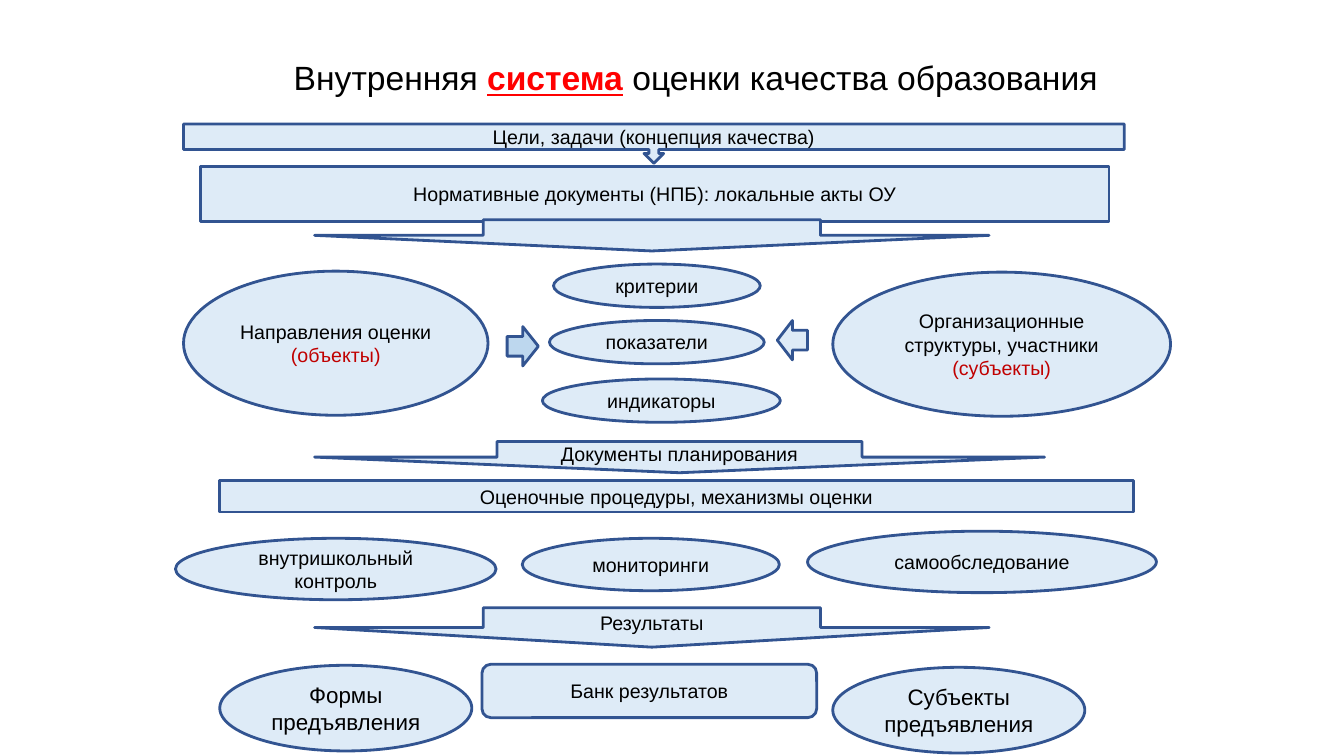
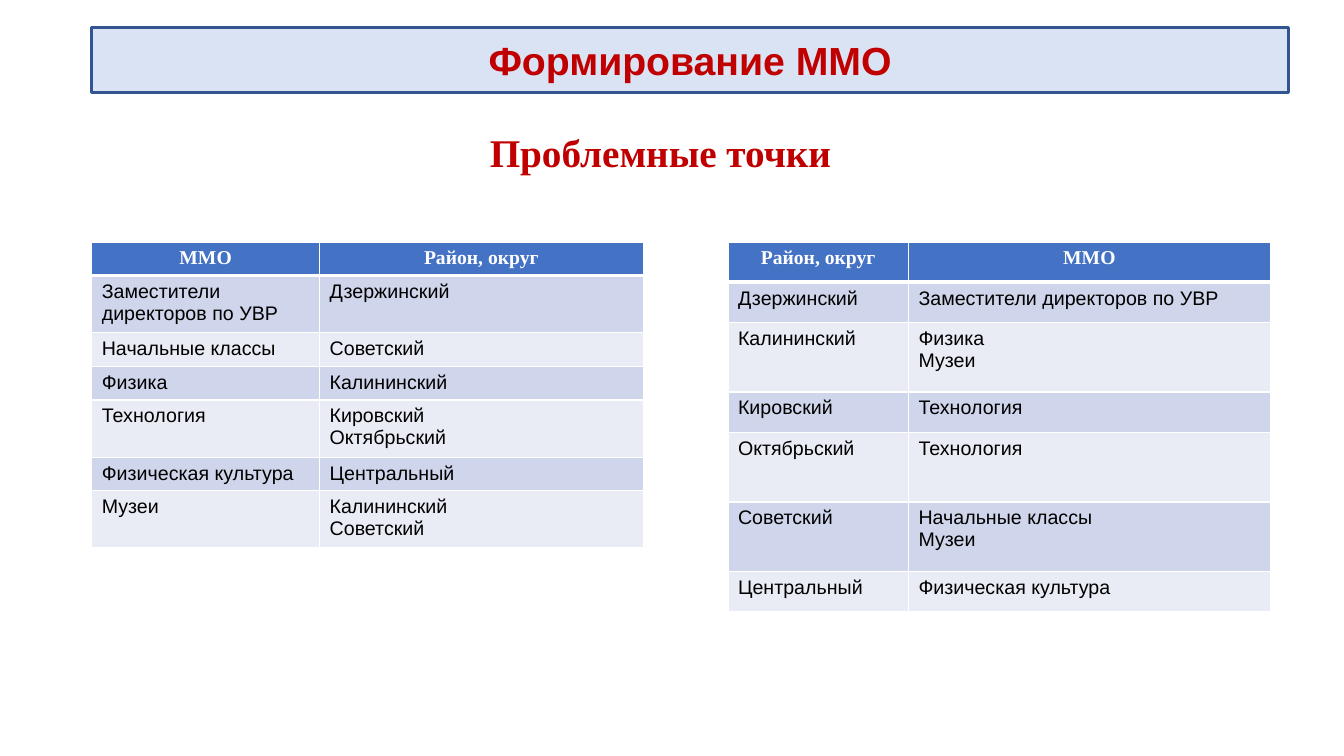
from dataclasses import dataclass
from lxml import etree
from pptx import Presentation
from pptx.dml.color import RGBColor
from pptx.enum.shapes import MSO_SHAPE as Kind
from pptx.enum.text import MSO_ANCHOR as Anchor, PP_ALIGN as Align
from pptx.oxml.ns import qn
from pptx.util import Inches, Pt


@dataclass(frozen=True)
class Theme:
    sans: str = "Arial"
    serif: str = "Times New Roman"
    ink: str = "000000"
    white: str = "FFFFFF"
    red: str = "C00000"
    alert: str = "FF0000"
    edge: str = "325491"
    pale: str = "DEEBF7"
    sky: str = "BDD7EE"
    band: str = "DAE3F3"
    head: str = "4472C4"
    rows: tuple = ("CFD5EA", "E9EBF5")
    body: int = 14
    large: int = 16
    title: int = 24
    banner: int = 28


T = Theme()


def write(frame, text, size=T.body, color=T.ink, font=T.sans, bold=False,
          align=Align.CENTER):
    """Fill a frame; lines in brackets turn red."""
    frame.word_wrap = True
    frame.text = text
    for para in frame.paragraphs:
        para.alignment = align
        for run in para.runs:
            tint = T.red if run.text.startswith("(") else color
            run.font.size, run.font.name, run.font.bold = Pt(size), font, bold
            run.font.color.rgb = RGBColor.from_string(tint)


def draw(slide, kind, spot, text="", fill=T.pale, **style):
    """Add an outlined shape with centred text."""
    shape = slide.shapes.add_shape(kind, *map(Inches, spot))
    shape.shadow.inherit = False
    shape.fill.solid()
    shape.fill.fore_color.rgb = RGBColor.from_string(fill)
    shape.line.color.rgb = RGBColor.from_string(T.edge)
    shape.line.width = Pt(2)
    shape.text_frame.vertical_anchor = Anchor.MIDDLE
    if text:
        write(shape.text_frame, text, **style)


deck = Presentation()
deck.slide_width, deck.slide_height = Inches(13.33), Inches(7.5)
blank = deck.slide_layouts[6]

# Slide 1: title with a stressed word
scheme = deck.slides.add_slide(blank)
box = scheme.shapes.add_textbox(*map(Inches, (2.41, 0.52, 8.98, 0.51)))
para = box.text_frame.paragraphs[0]
for part in ("Внутренняя ", "система", " оценки качества образования"):
    para.add_run().text = part
box.text_frame.word_wrap = True
para.alignment = Align.CENTER
for run in para.runs:
    key = run.text == "система"
    run.font.size, run.font.name = Pt(T.title), T.sans
    run.font.bold = run.font.underline = key
    run.font.color.rgb = RGBColor.from_string(T.alert if key else T.ink)

# Slide 1: scheme, back to front
for kind, spot, text in (
    (Kind.RECTANGLE, (1.99, 1.65, 9.01, 0.55),
     "Нормативные документы (НПБ): локальные акты ОУ"),
    (Kind.DOWN_ARROW_CALLOUT, (1.82, 1.23, 9.33, 0.39),
     "Цели, задачи (концепция качества)"),
    (Kind.OVAL, (1.82, 2.69, 3.02, 1.43), "Направления оценки\n(объекты)"),
    (Kind.OVAL, (5.49, 2.62, 2.05, 0.43), "критерии"),
    (Kind.OVAL, (5.45, 3.18, 2.13, 0.43), "показатели"),
    (Kind.OVAL, (5.38, 3.76, 2.36, 0.43), "индикаторы"),
    (Kind.OVAL, (8.26, 2.7, 3.35, 1.43),
     "Организационные структуры, участники\n(субъекты)"),
    (Kind.DOWN_ARROW, (3.12, 2.18, 6.69, 0.31), ""),
    (Kind.LEFT_ARROW, (7.71, 3.18, 0.3, 0.39), ""),
    (Kind.RECTANGLE, (2.18, 4.77, 9.06, 0.31),
     "Оценочные процедуры, механизмы оценки"),
    (Kind.DOWN_ARROW, (3.12, 4.38, 7.24, 0.31), "Документы планирования"),
    (Kind.OVAL, (1.74, 5.34, 3.18, 0.61), "внутришкольный контроль"),
    (Kind.OVAL, (5.18, 5.34, 2.55, 0.52), "мониторинги"),
    (Kind.OVAL, (8.01, 5.27, 3.46, 0.61), "самообследование"),
    (Kind.DOWN_ARROW, (3.12, 6.03, 6.69, 0.39), "Результаты"),
    (Kind.ROUNDED_RECTANGLE, (4.78, 6.59, 3.32, 0.53), "Банк результатов"),
):
    draw(scheme, kind, spot, text)
draw(scheme, Kind.RIGHT_ARROW, (5.03, 3.24, 0.31, 0.39), fill=T.sky)
for left, top, text in ((2.18, 6.6, "Формы предъявления"),
                        (8.26, 6.62, "Субъекты предъявления")):
    draw(scheme, Kind.OVAL, (left, top, 2.5, 0.85), text, size=T.large)

# Slide 2: tables
points = deck.slides.add_slide(blank)
for left, cols, highs, data in (
    (0.91, (2.26, 3.21), (0.3, 0.54, 0.32, 0.32, 0.54, 0.32, 0.54), (
        ("ММО", "Район, округ"),
        ("Заместители директоров по УВР", "Дзержинский"),
        ("Начальные классы", "Советский"),
        ("Физика", "Калининский"),
        ("Технология", "Кировский\nОктябрьский"),
        ("Физическая культура", "Центральный"),
        ("Музеи", "Калининский\nСоветский"))),
    (7.22, (1.79, 3.59), (0.4, 0.4, 0.69, 0.4, 0.69, 0.69, 0.4), (
        ("Район, округ", "ММО"),
        ("Дзержинский", "Заместители директоров по УВР"),
        ("Калининский", "Физика\nМузеи"),
        ("Кировский", "Технология"),
        ("Октябрьский", "Технология"),
        ("Советский", "Начальные классы\nМузеи"),
        ("Центральный", "Физическая культура"))),
):
    spot = (left, 2.4, sum(cols), sum(highs))
    table = points.shapes.add_table(
        len(data), len(cols), *map(Inches, spot)).table
    table.horz_banding = False
    for col, wide in zip(table.columns, cols):
        col.width = Inches(wide)
    for i, (row, high, texts) in enumerate(zip(table.rows, highs, data)):
        row.height = Inches(high)
        for cell, text in zip(row.cells, texts):
            # White borders, thick around the header's lower edge
            props = cell._tc.get_or_add_tcPr()
            for side in ("L", "R", "T", "B"):
                thick = (side, i) in (("B", 0), ("T", 1))
                line = etree.SubElement(props, qn("a:ln" + side),
                                        w=str(Pt(3 if thick else 1)))
                paint = etree.SubElement(line, qn("a:solidFill"))
                etree.SubElement(paint, qn("a:srgbClr"), val=T.white)
            cell.fill.solid()
            tone = T.rows[(i - 1) % 2] if i else T.head
            cell.fill.fore_color.rgb = RGBColor.from_string(tone)
            if i:
                write(cell.text_frame, text, align=Align.LEFT)
            else:
                write(cell.text_frame, text, color=T.white, font=T.serif,
                      bold=True)

# Slide 2: banner and subtitle
draw(points, Kind.RECTANGLE, (0.91, 0.27, 11.87, 0.65), "Формирование ММО",
     fill=T.band, size=T.banner, color=T.red, bold=True)
box = points.shapes.add_textbox(*map(Inches, (4.76, 1.22, 4.56, 0.57)))
write(box.text_frame, "Проблемные точки", size=T.banner, color=T.red,
      font=T.serif, bold=True, align=Align.LEFT)

deck.save("out.pptx")
